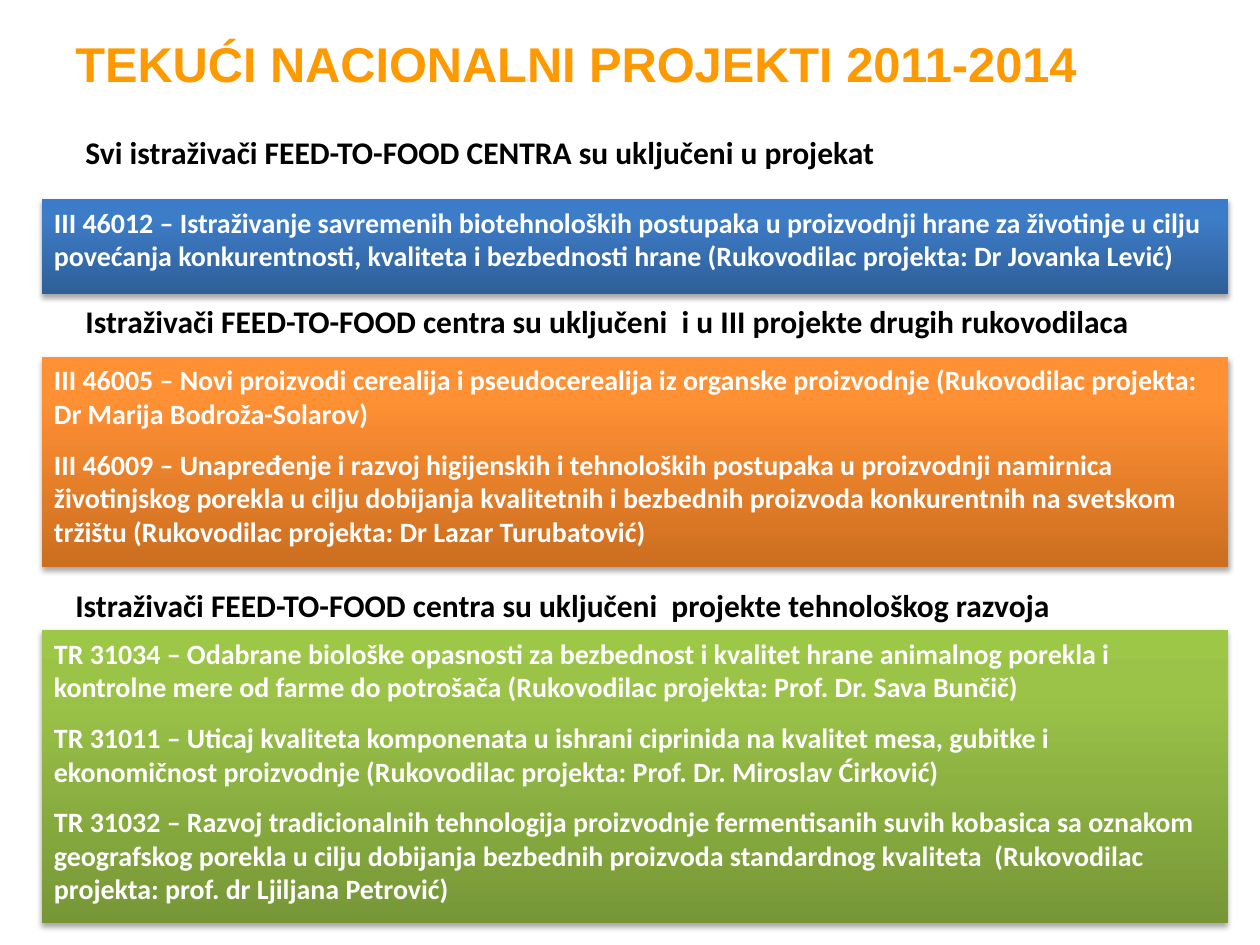
from copy import deepcopy

from pptx import Presentation
from pptx import util as u
from pptx.dml.color import RGBColor
from pptx.enum import shapes, text
from pptx.oxml import parse_xml
from pptx.oxml.ns import nsdecls

BAND_LEFT, BAND_WIDTH = 0.33, 9.42
SECTIONS = [
    {
        "heading": "Svi istraživači FEED-TO-FOOD CENTRA su uključeni u projekat",
        "heading_box": (0.58, 1.01, 6.58, 0.4),
        "band": (1.58, 0.75),
        "gradient": ("2F5F99", "3D7CC7", "3A7CCB"),
        "projects": [
            "III 46012 – Istraživanje savremenih biotehnoloških postupaka u proizvodnji hrane za životinje u cilju povećanja konkurentnosti, kvaliteta i bezbednosti hrane (Rukovodilac projekta: Dr Jovanka Lević)",
        ],
    },
    {
        "heading": "Istraživači FEED-TO-FOOD centra su uključeni  i u III projekte drugih rukovodilaca",
        "heading_box": (0.58, 2.35, 8.92, 0.4),
        "band": (2.83, 1.67),
        "gradient": ("CC6E20", "FF9034", "FF9136"),
        "projects": [
            "III 46005 – Novi proizvodi cerealija i pseudocerealija iz organske proizvodnje (Rukovodilac projekta: Dr Marija Bodroža-Solarov)",
            "III 46009 – Unapređenje i razvoj higijenskih i tehnoloških postupaka u proizvodnji namirnica životinjskog porekla u cilju dobijanja kvalitetnih i bezbednih proizvoda konkurentnih na svetskom tržištu (Rukovodilac projekta: Dr Lazar Turubatović)",
        ],
    },
    {
        "heading": "Istraživači FEED-TO-FOOD centra su uključeni  projekte tehnološkog razvoja",
        "heading_box": (0.5, 4.6, 8, 0.4),
        "band": (5, 2.33),
        "gradient": ("779737", "9BC348", "9DC746"),
        "projects": [
            "TR 31034 – Odabrane biološke opasnosti za bezbednost i kvalitet hrane animalnog porekla i kontrolne mere od farme do potrošača (Rukovodilac projekta: Prof. Dr. Sava Bunčič)",
            "TR 31011 – Uticaj kvaliteta komponenata u ishrani ciprinida na kvalitet mesa, gubitke i ekonomičnost proizvodnje (Rukovodilac projekta: Prof. Dr. Miroslav Ćirković)",
            "TR 31032 – Razvoj tradicionalnih tehnologija proizvodnje fermentisanih suvih kobasica sa oznakom geografskog porekla u cilju dobijanja bezbednih proizvoda standardnog kvaliteta  (Rukovodilac projekta: prof. dr Ljiljana Petrović)",
        ],
    },
]


def color(value):
    """Turn a hex string into a colour."""
    return RGBColor.from_string(value)


def add_run(paragraph, words, size, font, fill):
    """Add one bold run to a left-aligned paragraph."""
    paragraph.alignment = text.PP_ALIGN.LEFT
    run = paragraph.add_run()
    run.text = words
    run.font.size = u.Pt(size)
    run.font.name = font
    run.font.bold = True
    run.font.color.rgb = color(fill)


def add_line(slide, box, words, size, font="Calibri", fill="000000", top_inset=0.05):
    """Place a single line of text in the given box."""
    shape = slide.shapes.add_textbox(*map(u.Inches, box))
    frame = shape.text_frame
    frame.word_wrap = True
    frame.margin_top = u.Inches(top_inset)
    add_run(frame.paragraphs[0], words, size, font, fill)


def fill_gradient(shape, colors):
    """Fill a shape with a three-stop gradient that rises from the bottom."""
    shape.fill.gradient()
    shape.fill.gradient_angle = 90
    first = shape.element.spPr.xpath("./a:gradFill/a:gsLst/a:gs")[0]
    first.addnext(deepcopy(first))
    for stop, position, value in zip(shape.fill.gradient_stops, (0, 0.8, 1), colors):
        stop.position = position
        stop.color.rgb = color(value)


def add_shadow(shape):
    """Give a shape a soft shadow straight below it."""
    shape.shadow.inherit = False
    effects = shape.element.spPr.xpath("./a:effectLst")[0]
    effects.append(parse_xml(
        f'<a:outerShdw {nsdecls("a")} blurRad="{u.Pt(3.1)}" dist="{u.Pt(1.8)}" '
        'dir="5400000" rotWithShape="0"><a:srgbClr val="000000">'
        '<a:alpha val="35000"/></a:srgbClr></a:outerShdw>'))


def add_band(slide, box, colors, projects):
    """Place a coloured band that lists projects in the given box."""
    shape = slide.shapes.add_shape(
        shapes.MSO_SHAPE.RECTANGLE, *map(u.Inches, box))
    shape.line.fill.background()
    fill_gradient(shape, colors)
    add_shadow(shape)
    frame = shape.text_frame
    frame.word_wrap = True
    frame.vertical_anchor = text.MSO_ANCHOR.TOP
    for index, project in enumerate(projects):
        paragraph = frame.add_paragraph() if index else frame.paragraphs[0]
        paragraph.space_before = u.Pt(9.8 if index else 0)
        add_run(paragraph, project, 16, "Calibri", "FFFFFF")


def add_section(slide, section):
    """Place a heading and its band of projects."""
    add_line(slide, section["heading_box"], section["heading"], 18)
    top, height = section["band"]
    add_band(slide, (BAND_LEFT, top, BAND_WIDTH, height),
             section["gradient"], section["projects"])


def main():
    """Build and save the presentation."""
    presentation = Presentation()
    presentation.slide_width = u.Inches(10)
    presentation.slide_height = u.Inches(7.5)
    slide = presentation.slides.add_slide(presentation.slide_layouts[6])
    add_line(slide, (0.5, 0.17, 9.17, 0.92), "TEKUĆI NACIONALNI PROJEKTI 2011-2014",
             27.9, "Arial", "FF9900", 0.1)
    for section in SECTIONS:
        add_section(slide, section)
    presentation.save("out.pptx")


if __name__ == "__main__":
    main()
